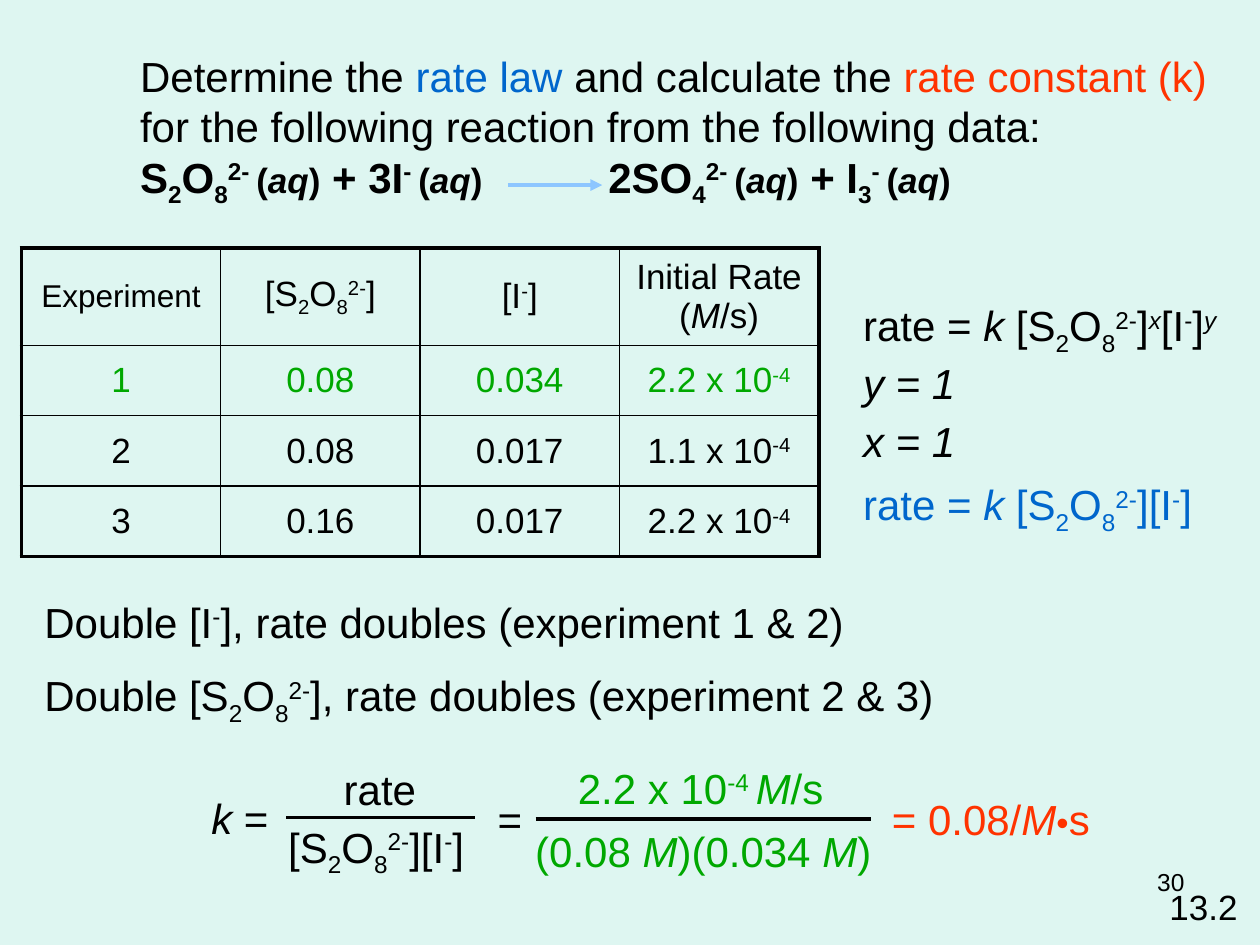
from dataclasses import dataclass

from lxml import etree
from pptx import Presentation
from pptx import util as u
from pptx.dml.color import RGBColor
from pptx.enum import shapes, text
from pptx.oxml import ns


@dataclass(frozen=True)
class Theme:
    font: str = "Arial"
    background: str = "DEF6F1"
    ink: str = "000000"
    blue: str = "0066CC"
    red: str = "FF3300"
    green: str = "00A800"
    arrow: str = "8DC6FF"
    body: int = 24
    small: int = 20
    heading: int = 18
    number: int = 14
    thick: float = 2.25
    thin: float = 1


THEME = Theme()
PERSULFATE = "S_2_O_8_^2-^"
LINE_HEIGHT = 1.27  # cm


@dataclass(frozen=True)
class Label:
    markup: str
    left: float
    top: float
    width: float
    color: str = THEME.ink
    size: int = THEME.body
    align: text.PP_ALIGN = text.PP_ALIGN.LEFT


@dataclass(frozen=True)
class Rule:
    left: float
    right: float
    y: float
    color: str = THEME.ink
    arrow: bool = False


def write(paragraph, markup: str, *, color: str = THEME.ink, size: int = THEME.body,
          bold: bool = False, align: text.PP_ALIGN = text.PP_ALIGN.LEFT) -> None:
    """Append text; _ ^ * ~ switch subscript, superscript, italic and small on and off."""
    paragraph.alignment = align
    active: set[str] = set()
    piece = ""
    for character in markup + "~":
        if character not in "_^*~":
            piece += character
            continue
        if piece:
            run = paragraph.add_run()
            run.text = piece
            font = run.font
            font.name, font.bold, font.italic = THEME.font, bold, "*" in active
            font.size = u.Pt(THEME.small if "~" in active else size)
            font.color.rgb = RGBColor.from_string(color)
            if active & {"_", "^"}:
                baseline = "-25000" if "_" in active else "30000"
                run._r.get_or_add_rPr().set("baseline", baseline)
        piece = ""
        active ^= {character}


def place(shape, left: float, top: float, width: float, height: float) -> None:
    shape.left, shape.top = u.Cm(left), u.Cm(top)
    shape.width, shape.height = u.Cm(width), u.Cm(height)
    shape.text_frame.vertical_anchor = text.MSO_ANCHOR.TOP
    shape.text_frame.auto_size = text.MSO_AUTO_SIZE.NONE


def add_label(slide, label: Label) -> None:
    box = slide.shapes.add_textbox(u.Cm(label.left), u.Cm(label.top),
                                   u.Cm(label.width), u.Cm(LINE_HEIGHT))
    box.text_frame.word_wrap = False
    write(box.text_frame.paragraphs[0], label.markup, color=label.color,
          size=label.size, align=label.align)


def add_rule(slide, rule: Rule) -> None:
    line = slide.shapes.add_connector(shapes.MSO_CONNECTOR.STRAIGHT, u.Cm(rule.left),
                                      u.Cm(rule.y), u.Cm(rule.right), u.Cm(rule.y))
    line.line.color.rgb = RGBColor.from_string(rule.color)
    line.line.width = u.Pt(THEME.thick)
    if rule.arrow:
        etree.SubElement(line.line._get_or_add_ln(), ns.qn("a:tailEnd"), type="triangle")
    etree.SubElement(line._element.spPr, ns.qn("a:effectLst"))


def set_borders(cell, outer_sides: dict[str, bool]) -> None:
    properties = cell._tc.get_or_add_tcPr()
    for index, (side, outer) in enumerate(outer_sides.items()):
        width = u.Pt(THEME.thick if outer else THEME.thin)
        border = etree.Element(ns.qn(f"a:ln{side}"), w=str(int(width)))
        fill = etree.SubElement(border, ns.qn("a:solidFill"))
        etree.SubElement(fill, ns.qn("a:srgbClr"), val=THEME.ink)
        properties.insert(index, border)


def add_data_table(slide, rows: list[list[str]]) -> None:
    column_width, heading_height, row_height = 4.02, 1.96, 1.42
    row_count, column_count = len(rows), len(rows[0])
    table = slide.shapes.add_table(
        row_count, column_count, u.Cm(0.43), u.Cm(5), u.Cm(column_width * column_count),
        u.Cm(heading_height + row_height * (row_count - 1))).table
    table.first_row = table.horz_banding = False
    for column in table.columns:
        column.width = u.Cm(column_width)
    for r, values in enumerate(rows):
        table.rows[r].height = u.Cm(row_height if r else heading_height)
        for c, value in enumerate(values):
            cell = table.cell(r, c)
            cell.vertical_anchor = text.MSO_ANCHOR.MIDDLE
            cell.fill.background()
            write(cell.text_frame.paragraphs[0], value,
                  color=THEME.green if r == 1 else THEME.ink,
                  size=THEME.heading if r == c == 0 else THEME.small,
                  align=text.PP_ALIGN.CENTER)
            set_borders(cell, {"L": c == 0, "R": c == column_count - 1,
                               "T": r == 0, "B": r == row_count - 1})


def fill_title(title) -> None:
    place(title, 2.57, 0.89, 22.73, 3.3)
    question = title.text_frame.paragraphs[0]
    for words, color in [("Determine the ", THEME.ink), ("rate law", THEME.blue),
                         (" and calculate the ", THEME.ink),
                         ("rate constant (k)", THEME.red),
                         (" for the following reaction from the following data:", THEME.ink)]:
        write(question, words, color=color)
    reaction = title.text_frame.add_paragraph()
    state = "~(*aq*)~"
    write(reaction, f"S_2_O_8_^2- ^{state} + 3I^- ^{state}\t"
                    f"2SO_4_^2- ^{state} + I_3_^- ^{state}", bold=True)
    # The tab leaves room for the reaction arrow
    tabs = etree.SubElement(reaction._p.get_or_add_pPr(), ns.qn("a:tabLst"))
    etree.SubElement(tabs, ns.qn("a:tab"), pos=str(int(u.Cm(9.44))), algn="l")


def fill_findings(body, findings: list[str]) -> None:
    place(body, 0.64, 11.89, 19.5, 2.72)
    for index, finding in enumerate(findings):
        frame = body.text_frame
        paragraph = frame.add_paragraph() if index else frame.paragraphs[0]
        write(paragraph, finding)
        paragraph.space_before = u.Pt(13.4 if index else 0)
        properties = paragraph._p.get_or_add_pPr()
        properties.set("marL", "0")
        properties.set("indent", "0")
        etree.SubElement(properties, ns.qn("a:buNone"))


def main() -> None:
    presentation = Presentation()
    presentation.slide_width, presentation.slide_height = u.Cm(25.4), u.Cm(19.05)
    slide = presentation.slides.add_slide(presentation.slide_layouts[1])
    slide.background.fill.solid()
    slide.background.fill.fore_color.rgb = RGBColor.from_string(THEME.background)

    # Question and findings
    fill_title(slide.shapes.title)
    fill_findings(slide.placeholders[1], [
        "Double [I^-^], rate doubles (experiment 1 & 2)",
        f"Double [{PERSULFATE}], rate doubles (experiment 2 & 3)"])

    # Measured data
    add_data_table(slide, [
        ["Experiment", f"[{PERSULFATE}]", "[I^-^]", "Initial Rate (*M*/s)"],
        ["1", "0.08", "0.034", "2.2 x 10^-4^"],
        ["2", "0.08", "0.017", "1.1 x 10^-4^"],
        ["3", "0.16", "0.017", "2.2 x 10^-4^"]])

    right = text.PP_ALIGN.RIGHT
    labels = [
        # Rate law
        Label(f"rate = *k* [{PERSULFATE}]^*x*^[I^-^]^*y*^", 17.15, 5.92, 7.87),
        Label("*y = 1*", 17.15, 7.09, 2.36),
        Label("*x = 1*", 17.15, 8.26, 2.36),
        Label(f"rate = *k* [{PERSULFATE}][I^-^]", 17.15, 9.53, 7.29, THEME.blue),
        # Rate constant
        Label("*k* =", 4.01, 15.85, 1.91),
        Label("rate", 6.68, 15.27, 1.98),
        Label(f"[{PERSULFATE}][I^-^]", 5.56, 16.43, 4.22),
        Label("=", 9.78, 15.88, 1.02),
        Label("2.2 x 10^-4 ^*M*/s", 11.4, 15.24, 5.54, THEME.green),
        Label("(0.08 *M*)(0.034 *M*)", 10.54, 16.51, 7.29, THEME.green),
        Label("= 0.08/*M*~•~s", 17.73, 15.88, 4.5, THEME.red),
        # Slide and section numbers
        Label("30", 18.21, 17.35, 5.92, size=THEME.number, align=right),
        Label("13.2", 23.32, 17.73, 1.88, size=THEME.small, align=right),
    ]
    for label in labels:
        add_label(slide, label)

    # Reaction arrow and fraction bars
    for rule in [Rule(10.24, 12.14, 3.73, THEME.arrow, arrow=True),
                 Rule(5.77, 9.58, 16.48), Rule(10.8, 17.55, 16.51)]:
        add_rule(slide, rule)

    presentation.save("out.pptx")


if __name__ == "__main__":
    main()
